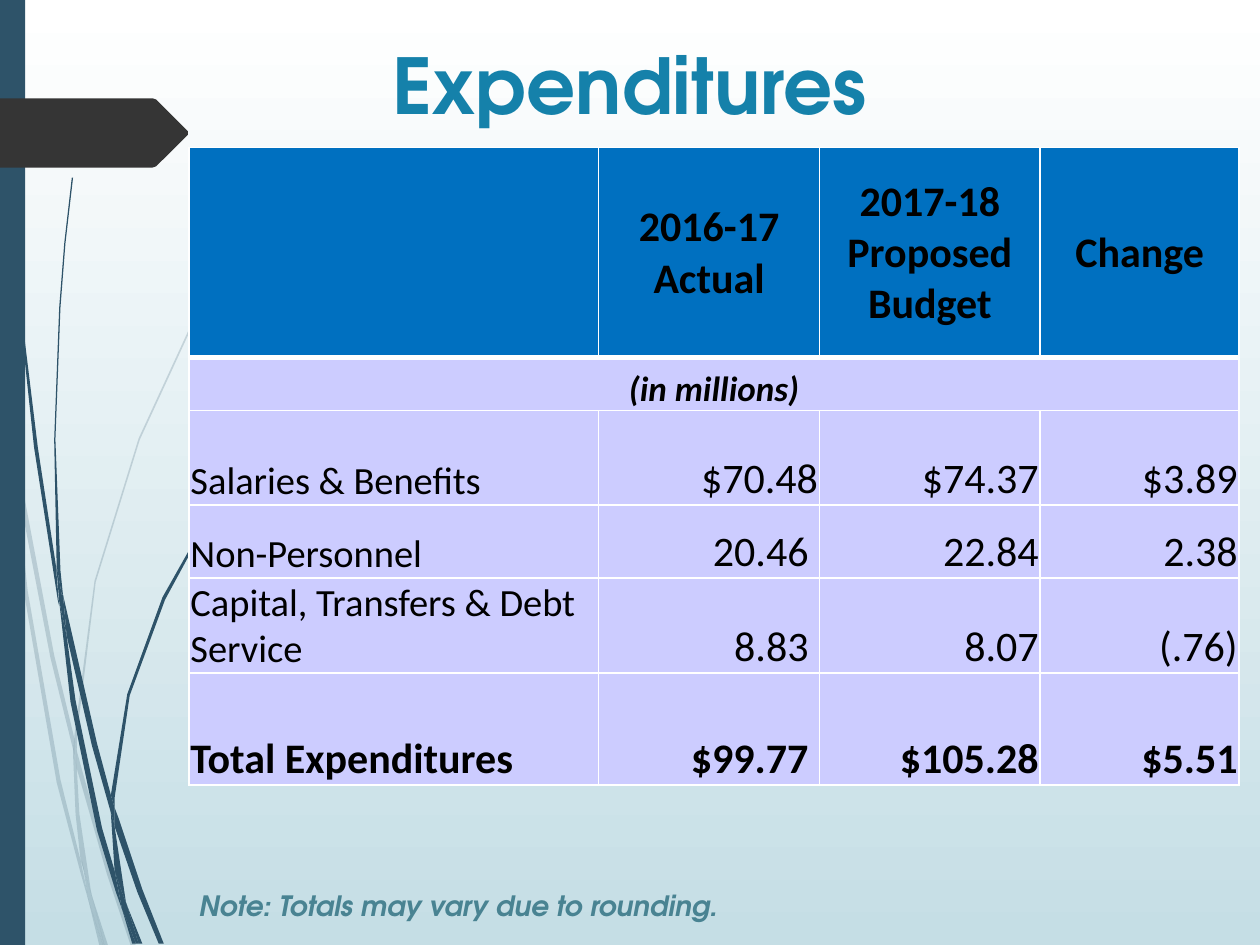
from lxml.etree import SubElement
from pptx import Presentation
from pptx.dml.color import RGBColor
from pptx.enum.shapes import MSO_SHAPE
from pptx.enum.text import MSO_ANCHOR, MSO_AUTO_SIZE, PP_ALIGN
from pptx.oxml import parse_xml
from pptx.oxml.ns import nsdecls, qn
from pptx.util import Cm, Pt

COLORS = {"top": "FFFFFF", "bottom": "C5DEE5", "slate": "2E5369", "tag": "353535",
          "title": "1581AA", "header": "0070C0", "body": "CCCCFF",
          "text": "000000", "border": "FFFFFF", "note": "498392"}
HEADING_FONT, TABLE_FONT = "TeX Gyre Adventor", "Calibri"

TITLE = "Expenditures"
NOTE = "Note: Totals may vary due to rounding."
ROWS = [
    ("", "2016-17 Actual", "2017-18 Proposed Budget", "Change"),
    ("(in millions)", "", "", ""),
    ("Salaries & Benefits", "$70.48", "$74.37", "$3.89"),
    ("Non-Personnel", "20.46", "22.84", "2.38"),
    ("Capital, Transfers & Debt Service", "8.83", "8.07", "(.76)"),
    ("Total Expenditures", "$99.77", "$105.28", "$5.51"),
]
COLUMN_WIDTHS = (8.26, 4.45, 4.45, 4.01)
ROW_HEIGHTS = (4.24, 1.07, 1.9, 1.47, 1.9, 2.26)
HEADER, UNITS, TOTAL = 0, 1, len(ROWS) - 1
PADDED = {(3, 1), (4, 1), (5, 1)}

# Outlines of the grass blades, in units of 0.0254 cm
UNIT = Cm(0.0254)
PALE_BLADES = [
    [(8, 350), (6, 322), (0, 282), (0, 299), (7, 344)],
    [(40, 522), (59, 599), (59, 586), (43, 520), (10, 345), (12, 376)],
    [(64, 607), (61, 596), (61, 610), (85, 694), (104, 751), (108, 751), (88, 692)],
    [(83, 751), (86, 751), (73, 711)],
    [(64, 683), (48, 619), (22, 469), (12, 376), (8, 350), (19, 470), (45, 621),
     (64, 693), (70, 714), (69, 707)],
    [(58, 599), (60, 646), (64, 683), (67, 692), (73, 711), (72, 706), (63, 646),
     (61, 610), (61, 608)],
    [(61, 584), (76, 462), (111, 349), (159, 245), (187, 198), (201, 175), (217, 154),
     (217, 153), (201, 175), (186, 197), (158, 244), (110, 348), (75, 461), (59, 584),
     (59, 586), (61, 596)],
    [(70, 714), (79, 751), (82, 751)],
    [(61, 608), (61, 610), (61, 596), (59, 586), (58, 599)],
    [(67, 692), (65, 683), (69, 707), (70, 714), (82, 751), (83, 751), (73, 711)],
]
DARK_BLADES = [
    [(5, 110), (14, 233), (27, 355), (46, 477), (47, 481), (45, 457), (45, 453),
     (30, 355), (15, 232), (6, 109), (4, 48), (3, 0), (2, 0), (3, 48)],
    [(73, 592), (88, 645), (88, 633), (88, 631), (77, 590), (50, 472), (53, 505)],
    [(94, 649), (91, 641), (91, 656), (109, 708), (126, 749), (130, 749), (113, 706)],
    [(91, 691), (81, 657), (60, 556), (53, 505), (47, 477), (56, 557), (77, 659),
     (92, 708), (97, 722), (96, 717)],
    [(50, 472), (48, 453), (44, 349), (48, 244), (52, 193), (58, 141), (57, 141),
     (51, 193), (47, 244), (43, 349), (45, 449), (49, 472)],
    [(110, 749), (113, 749), (101, 719)],
    [(47, 477), (53, 505), (50, 472), (49, 472), (45, 449), (45, 453)],
    [(91, 633), (103, 552), (131, 476), (169, 406), (191, 374), (203, 359), (216, 344),
     (215, 344), (203, 358), (191, 373), (168, 405), (129, 474), (101, 551), (88, 631),
     (91, 641)],
    [(97, 722), (105, 749), (108, 749)],
    [(88, 645), (91, 691), (96, 706), (101, 719), (100, 716), (91, 656), (90, 651)],
    [(88, 645), (90, 651), (91, 656), (91, 641), (88, 631), (88, 633)],
    [(96, 706), (91, 691), (96, 717), (97, 722), (108, 749), (110, 749), (101, 719)],
]
TAG = [(0, 78), (121, 78), (124, 79), (149, 104), (149, 107), (124, 132), (121, 133), (0, 133)]


def rgb(name):
    return RGBColor.from_string(COLORS[name])


def paint(shape, color, opacity=100):
    shape.shadow.inherit = False
    shape.fill.solid()
    shape.fill.fore_color.rgb = rgb(color)
    shape.line.fill.background()
    if opacity < 100:
        tint = shape.fill._xPr.find(qn("a:solidFill"))[0]
        SubElement(tint, qn("a:alpha"), val=str(opacity * 1000))


def add_outline(page, points, color, opacity=100):
    builder = page.shapes.build_freeform(*points[0], scale=UNIT)
    builder.add_line_segments(points[1:], close=True)
    paint(builder.convert_to_shape(), color, opacity)


def set_font(para, name, size, color, bold=False, italic=False):
    font = para.font
    font.name, font.size, font.bold, font.italic = name, Pt(size), bold, italic
    font.color.rgb = rgb(color)


def add_text(page, place, text, size, color, align, wrap=True, italic=False):
    box = page.shapes.add_textbox(*map(Cm, place))
    frame = box.text_frame
    frame.word_wrap = wrap
    frame.auto_size = MSO_AUTO_SIZE.NONE if wrap else MSO_AUTO_SIZE.SHAPE_TO_FIT_TEXT
    para = frame.paragraphs[0]
    para.text, para.alignment = text, align
    set_font(para, HEADING_FONT, size, color, True, italic)


def set_borders(cell, top, bottom):
    properties = cell._tc.get_or_add_tcPr()
    widths = {"lnL": 1, "lnR": 1, "lnT": top, "lnB": bottom}
    for index, (side, width) in enumerate(widths.items()):
        properties.insert(index, parse_xml(
            f'<a:{side} {nsdecls("a")} w="{Pt(width)}"><a:solidFill>'
            f'<a:srgbClr val="{COLORS["border"]}"/></a:solidFill></a:{side}>'))


def style_cell(cell, row, column):
    cell.margin_left = cell.margin_top = Cm(0.03)
    cell.margin_right = Cm(0.22 if (row, column) in PADDED else 0.03)
    cell.margin_bottom = 0
    cell.vertical_anchor = MSO_ANCHOR.MIDDLE if row == HEADER else MSO_ANCHOR.BOTTOM
    cell.fill.solid()
    cell.fill.fore_color.rgb = rgb("header" if row == HEADER else "body")
    set_borders(cell, 3 if row == UNITS else 1, 3 if row == HEADER else 1)

    para = cell.text_frame.paragraphs[0]
    if row in (HEADER, UNITS):
        para.alignment = PP_ALIGN.CENTER
    else:
        para.alignment = PP_ALIGN.RIGHT if column else PP_ALIGN.LEFT
    if row == UNITS:
        size = 20
    else:
        size = 22 if column == 0 and row not in (HEADER, TOTAL) else 24
    set_font(para, TABLE_FONT, size, "text", row in (HEADER, UNITS, TOTAL), row == UNITS)


def add_budget_table(page):
    frame = page.shapes.add_table(
        len(ROWS), len(COLUMN_WIDTHS), Cm(3.81), Cm(2.97),
        Cm(sum(COLUMN_WIDTHS)), Cm(sum(ROW_HEIGHTS)))
    table = frame.table
    for column, width in zip(table.columns, COLUMN_WIDTHS):
        column.width = Cm(width)
    for row, height in zip(table.rows, ROW_HEIGHTS):
        row.height = Cm(height)
    for row, values in enumerate(ROWS):
        for column, value in enumerate(values):
            cell = table.cell(row, column)
            cell.text = value
            style_cell(cell, row, column)
    table.cell(UNITS, 0).merge(table.cell(UNITS, len(COLUMN_WIDTHS) - 1))


def main():
    deck = Presentation()
    deck.slide_width, deck.slide_height = Cm(25.4), Cm(19.05)
    page = deck.slides.add_slide(deck.slide_layouts[6])

    backdrop = page.background.fill
    backdrop.gradient()
    backdrop.gradient_angle = 270
    for stop, color, position in zip(backdrop.gradient_stops, ("top", "bottom"), (0, 1)):
        stop.color.rgb = rgb(color)
        stop.position = position

    for blades, opacity in ((PALE_BLADES, 20), (DARK_BLADES, 100)):
        for blade in blades:
            add_outline(page, blade, "slate", opacity)
    side_bar = page.shapes.add_shape(MSO_SHAPE.RECTANGLE, 0, 0, Cm(0.51), deck.slide_height)
    paint(side_bar, "slate")
    add_outline(page, TAG, "tag")

    add_text(page, (0, 0.64, 25.4, 1.57), TITLE, 44, "title", PP_ALIGN.CENTER)
    add_budget_table(page)
    add_text(page, (3.76, 17.78, 11.38, 0.94), NOTE, 16, "note", PP_ALIGN.LEFT,
             wrap=False, italic=True)
    deck.save("out.pptx")


if __name__ == "__main__":
    main()
